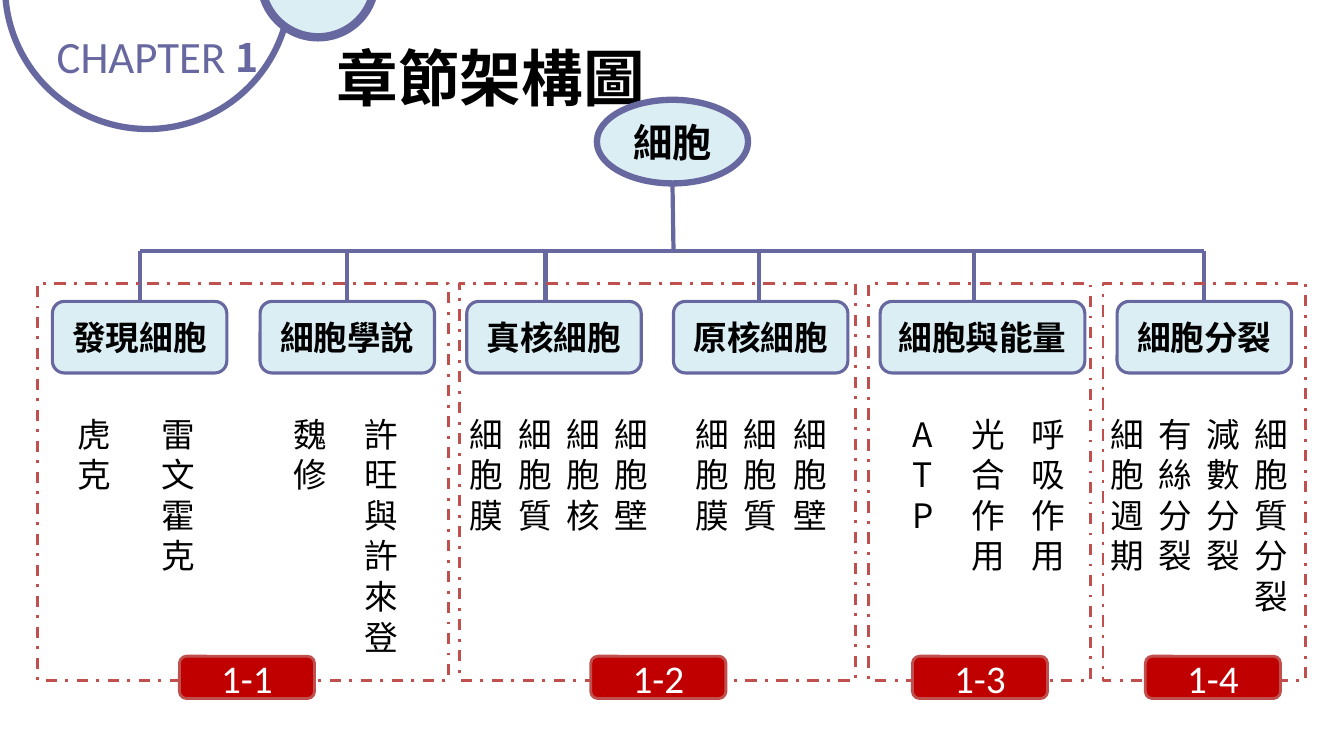
from lxml import etree
from pptx import Presentation
from pptx import util as u
from pptx.dml.color import RGBColor
from pptx.enum import dml, shapes, text
from pptx.oxml import ns

COLORS = {"violet": "6868A1", "pale": "DBEEF4", "red": "C00000", "brick": "C0504D",
          "black": "000000", "white": "FFFFFF"}
CJK = "Noto Sans CJK SC"
LATIN = "Calibri"

TOPICS = [
    ("發現細胞", 0.52, 1.73, 1.39, [("虎克", 0.67), ("雷文霍克", 1.5)]),
    ("細胞學說", 2.58, 1.73, 3.44, [("魏修", 2.81), ("許旺與許來登", 3.52)]),
    ("真核細胞", 4.63, 1.73, 5.41,
     [("細胞膜", 4.56), ("細胞質", 5.04), ("細胞核", 5.52), ("細胞壁", 6)]),
    ("原核細胞", 6.68, 1.73, 7.53, [("細胞膜", 6.8), ("細胞質", 7.28), ("細胞壁", 7.77)]),
    ("細胞與能量", 8.73, 2.03, 9.66, [("ATP", 8.95), ("光合作用", 9.54), ("呼吸作用", 10.13)]),
    ("細胞分裂", 11.08, 1.73, 11.94,
     [("細胞週期", 10.92), ("有絲分裂", 11.39), ("減數分裂", 11.87), ("細胞質分裂", 12.34)]),
]
SECTIONS = [("1-1", 0.37, 4.08, 1.78), ("1-2", 4.56, 3.93, 5.86),
            ("1-3", 8.61, 2.21, 9.05), ("1-4", 10.94, 2.01, 11.36)]
BUS_Y, TOPIC_Y, TERM_Y, FRAME_Y, BADGE_Y = 2.49, 2.99, 4.05, 2.81, 6.51


def color(name):
    return RGBColor.from_string(COLORS[name])


def write(frame, words, size=24, font=CJK, ink="black", bold=False,
          align=text.PP_ALIGN.LEFT, anchor=text.MSO_ANCHOR.TOP, leading=None):
    frame.word_wrap = True
    frame.auto_size = text.MSO_AUTO_SIZE.NONE
    frame.vertical_anchor = anchor
    paragraph = frame.paragraphs[0]
    paragraph.alignment = align
    if leading:
        paragraph.line_spacing = u.Pt(leading)
    run = paragraph.add_run()
    run.text = words
    run.font.size = u.Pt(size)
    run.font.bold = bold
    run.font.name = font
    run.font.color.rgb = color(ink)
    east_asian = etree.SubElement(run._r.get_or_add_rPr(), ns.qn("a:ea"))
    east_asian.set("typeface", font)


class ChapterMap:
    """Draws the parts of a chapter structure diagram on one slide."""

    def __init__(self, deck):
        self.slide = deck.slides.add_slide(deck.slide_layouts[5])

    def title(self, words, *box):
        heading = self.slide.shapes.title
        heading.left, heading.top, heading.width, heading.height = map(u.Inches, box)
        write(heading.text_frame, words, size=44, bold=True, leading=53)

    def shape(self, kind, *box, fill=None, line="violet", weight=2.25, dash=None):
        outline = self.slide.shapes.add_shape(kind, *map(u.Inches, box))
        outline.shadow.inherit = False
        if fill:
            outline.fill.solid()
            outline.fill.fore_color.rgb = color(fill)
        else:
            outline.fill.background()
        outline.line.color.rgb = color(line)
        outline.line.width = u.Pt(weight)
        if dash:
            outline.line.dash_style = dash
        return outline

    def label(self, kind, words, *box, size=24, font=CJK, ink="black", bold=True, **look):
        node = self.shape(kind, *box, **look)
        frame = node.text_frame
        frame.margin_left = frame.margin_right = frame.margin_top = frame.margin_bottom = 0
        write(frame, words, size=size, font=font, ink=ink, bold=bold,
              align=text.PP_ALIGN.CENTER, anchor=text.MSO_ANCHOR.MIDDLE)

    def words(self, words, *box, **look):
        note = self.slide.shapes.add_textbox(*map(u.Inches, box))
        write(note.text_frame, words, **look)

    def line(self, *ends):
        branch = self.slide.shapes.add_connector(
            shapes.MSO_CONNECTOR.STRAIGHT, *map(u.Inches, ends))
        branch.line.color.rgb = color("violet")
        branch.line.width = u.Pt(3)
        etree.SubElement(branch._element.spPr, ns.qn("a:effectLst"))


def main():
    deck = Presentation()
    deck.slide_width, deck.slide_height = u.Inches(13.33), u.Inches(7.5)
    chapter = ChapterMap(deck)
    oval, rounded = shapes.MSO_SHAPE.OVAL, shapes.MSO_SHAPE.ROUNDED_RECTANGLE

    ring = chapter.shape(oval, 0.05, -1.55, 2.83, 2.83, fill="white", weight=4.5)
    write(ring.text_frame, "CHAPTER", size=32, font=LATIN, ink="violet",
          anchor=text.MSO_ANCHOR.BOTTOM)
    chapter.shape(oval, 2.59, -0.76, 1.13, 1.13, fill="pale", weight=6)
    chapter.title("章節架構圖", 3.24, 0.34, 6.89, 0.84)
    chapter.words("1", 2.24, 0.28, 1, 0.56, size=28, ink="violet", bold=True, leading=34)

    chapter.line(TOPICS[0][3], BUS_Y, TOPICS[-1][3], BUS_Y)
    for _, _, _, stem, _ in TOPICS:
        chapter.line(stem, TOPIC_Y, stem, BUS_Y)
    chapter.line(6.67, 1.82, 6.68, BUS_Y)
    chapter.label(oval, "細胞", 5.92, 0.99, 1.5, 0.83, size=28, fill="pale", weight=4.5)

    for topic, left, width, _, terms in TOPICS:
        chapter.label(rounded, topic, left, TOPIC_Y, width, 0.71, fill="pale")
        for term, term_left in terms:
            chapter.words(term, term_left, TERM_Y, 0.47, 0.1 + 0.4 * len(term), leading=29)

    for number, left, width, badge_left in SECTIONS:
        chapter.shape(shapes.MSO_SHAPE.RECTANGLE, left, FRAME_Y, width, 3.94,
                      line="brick", weight=2, dash=dml.MSO_LINE.DASH_DOT)
        chapter.label(rounded, number, badge_left, BADGE_Y, 1.34, 0.42, size=28, font=LATIN,
                      ink="white", bold=False, fill="red", line="brick", weight=2)

    deck.save("out.pptx")


if __name__ == "__main__":
    main()
